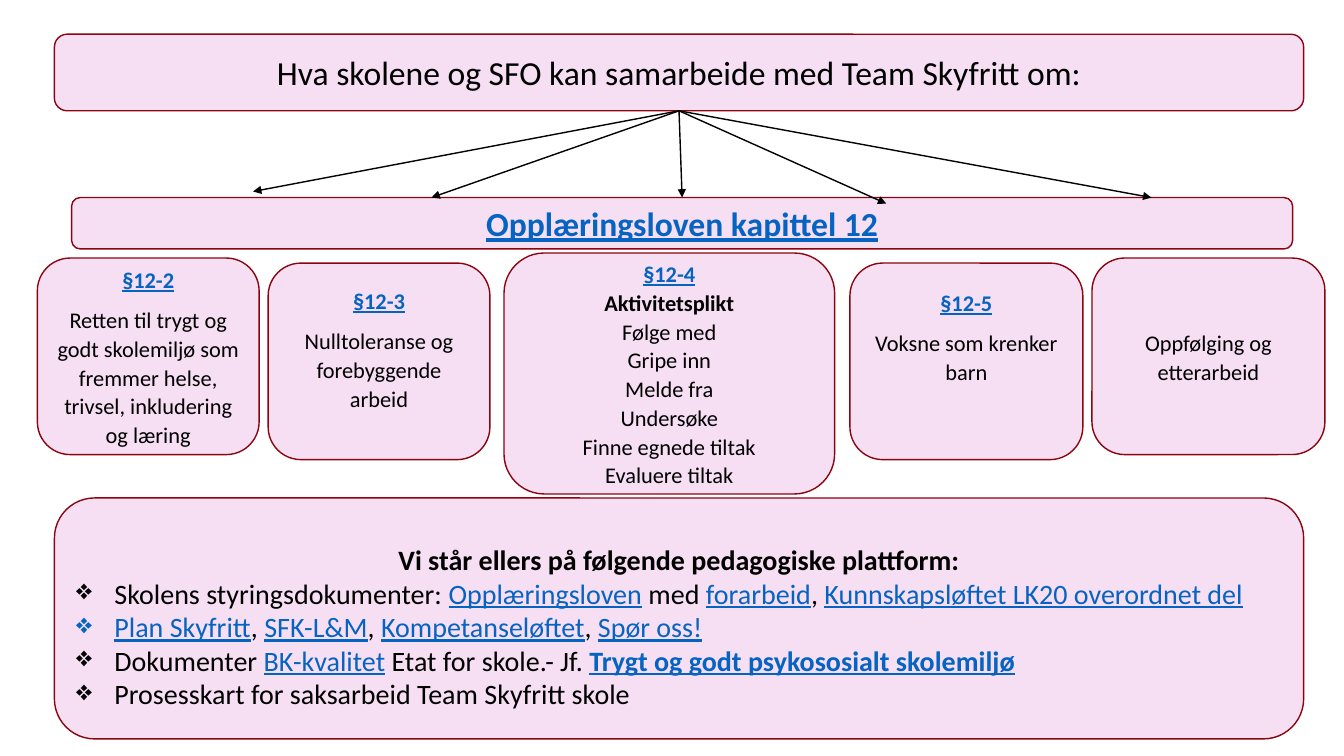
from dataclasses import dataclass

from pptx import Presentation
from pptx.dml.color import RGBColor
from pptx.enum.shapes import MSO_CONNECTOR, MSO_SHAPE
from pptx.enum.text import MSO_ANCHOR as Anchor, PP_ALIGN as Align
from pptx.oxml.ns import qn
from pptx.util import Emu, Inches, Pt
from lxml.etree import SubElement

PINK, DARK_RED, BLACK, LINK_BLUE = "F6DEF3", "8B0410", "000000", "0563C1"
PLAIN = {"name": "Calibri", "color": BLACK, "bold": False, "underline": False}
BOLD = PLAIN | {"bold": True}
LINK = PLAIN | {"color": LINK_BLUE, "underline": True}
BOLD_LINK = LINK | {"bold": True}
BOTTOM, TOP = 2, 0  # connection sites


@dataclass(frozen=True)
class Area:
    """Position and size in percent of the slide's width and height."""
    left: float
    top: float
    width: float
    height: float


@dataclass(frozen=True)
class Line:
    """One paragraph: pairs of text and format, and its layout."""
    runs: tuple
    space_after: float = 0
    bullet: bool = False


@dataclass(frozen=True)
class Card:
    area: Area
    lines: tuple = ()
    size: float = 16
    spacing: float = 1.07
    inset_top: float = 0.05
    inset_bottom: float = 0.05


def section(name: str, text: str) -> tuple:
    return Line(((name, BOLD_LINK),), 8), Line(((text, PLAIN),))


HEADING = "Hva skolene og SFO kan samarbeide med Team Skyfritt om:"
HEADER = Card(Area(4.05, 4.53, 92.95, 10.13))
LAW = Card(Area(5.33, 26.13, 90.85, 6.8),
           (Line((("Opplæringsloven kapittel 12", BOLD_LINK),)),), 24, 1)

DUTIES = ("Følge med", "Gripe inn", "Melde fra", "Undersøke",
          "Finne egnede tiltak", "Evaluere tiltak")
SECTIONS = (
    Card(Area(2.78, 34.13, 16.5, 26),
         section("§12-2", "Retten til trygt og godt skolemiljø som fremmer helse, "
                          "trivsel, inkludering og læring")),
    Card(Area(19.95, 34.8, 16.5, 26),
         section("§12-3", "Nulltoleranse og forebyggende arbeid"), inset_bottom=0.3),
    Card(Area(37.5, 33.47, 24.6, 31.87),
         (Line((("§12-4", BOLD_LINK),)), Line((("Aktivitetsplikt", BOLD),)),
          *(Line(((duty, PLAIN),)) for duty in DUTIES))),
    Card(Area(63.24, 34.8, 17.33, 26),
         section("§12-5", "Voksne som krenker barn"), inset_bottom=0.55),
    Card(Area(81.25, 34.13, 17.33, 26),
         (Line((("Oppfølging og etterarbeid", PLAIN),)),)),
)

COMMA = (", ", PLAIN)
PLATFORM = Card(Area(4.05, 65.87, 92.95, 31.87), (
    Line((("Vi står ellers på følgende pedagogiske plattform:", BOLD),)),
    Line((("Skolens styringsdokumenter: ", PLAIN), ("Opplæringsloven", LINK),
          (" med ", PLAIN), ("forarbeid", LINK), COMMA,
          ("Kunnskapsløftet LK20 overordnet del", LINK)), bullet=True),
    Line((("Plan Skyfritt", LINK), COMMA, ("SFK-L&M", LINK), COMMA,
          ("Kompetanseløftet", LINK), COMMA, ("Spør oss!", LINK)), bullet=True),
    Line((("Dokumenter ", PLAIN), ("BK-kvalitet", LINK),
          (" Etat for skole.- Jf. ", PLAIN),
          ("Trygt og godt psykososialt skolemiljø", BOLD_LINK)), bullet=True),
    Line((("Prosesskart for saksarbeid Team Skyfritt skole", PLAIN),), bullet=True),
), 20, 1, inset_top=0.21)

# Arrow tips; the middle arrow is joined to the law bar instead
ARROW_TIPS = ((18.83, 25.33), (32.11, 26.13), (65.94, 26.93), (85.67, 26.13))

presentation = Presentation()
presentation.slide_width, presentation.slide_height = Inches(13.33), Inches(7.5)
slide = presentation.slides.add_slide(presentation.slide_layouts[5])


def across(share: float) -> Emu:
    return Emu(round(presentation.slide_width * share / 100))


def down(share: float) -> Emu:
    return Emu(round(presentation.slide_height * share / 100))


def box(area: Area) -> tuple:
    return across(area.left), down(area.top), across(area.width), down(area.height)


def color(value: str) -> RGBColor:
    return RGBColor.from_string(value)


def format_font(font, values: dict) -> None:
    for name, value in values.items():
        if name == "color":
            font.color.rgb = color(value)
        else:
            setattr(font, name, value)


def write_line(paragraph, line: Line, card: Card) -> None:
    paragraph.alignment = Align.LEFT if line.bullet else Align.CENTER
    paragraph.line_spacing = card.spacing
    paragraph.space_after = Pt(line.space_after)
    if line.bullet:
        properties = paragraph._p.get_or_add_pPr()
        properties.set("marL", str(Inches(0.38)))
        properties.set("indent", str(-Inches(0.38)))
        SubElement(properties, qn("a:buChar")).set("char", "❖")
    for text, values in line.runs:
        run = paragraph.add_run()
        run.text = text
        format_font(run.font, values | {"size": Pt(card.size)})


def draw_card(card: Card):
    shape = slide.shapes.add_shape(MSO_SHAPE.FLOWCHART_ALTERNATE_PROCESS, *box(card.area))
    shape.shadow.inherit = False
    shape.fill.solid()
    shape.fill.fore_color.rgb = color(PINK)
    shape.line.color.rgb = color(DARK_RED)
    shape.line.width = Pt(1)
    frame = shape.text_frame
    frame.word_wrap = True
    frame.vertical_anchor = Anchor.MIDDLE
    frame.margin_top = Inches(card.inset_top)
    frame.margin_bottom = Inches(card.inset_bottom)
    for index, line in enumerate(card.lines):
        paragraph = frame.add_paragraph() if index else frame.paragraphs[0]
        write_line(paragraph, line, card)
    return shape


def draw_arrow(start, tip: tuple):
    arrow = slide.shapes.add_connector(MSO_CONNECTOR.STRAIGHT, 0, 0,
                                       across(tip[0]), down(tip[1]))
    arrow.begin_connect(start, BOTTOM)
    arrow.line.color.rgb = color(BLACK)
    arrow.line.width = Pt(1)
    SubElement(arrow.line._get_or_add_ln(), qn("a:tailEnd")).set("type", "triangle")
    SubElement(arrow._element.spPr, qn("a:effectLst"))
    return arrow


# Cards
draw_card(PLATFORM)
header_bar = draw_card(HEADER)
law_bar = draw_card(LAW)
for section_card in SECTIONS:
    draw_card(section_card)

# Title, in front of its bar
title = slide.shapes.title
title.left, title.top, title.width, title.height = box(HEADER.area)
title.text_frame.text = HEADING
title.text_frame.word_wrap = True
title.text_frame.vertical_anchor = Anchor.MIDDLE
title.text_frame.paragraphs[0].alignment = Align.CENTER
format_font(title.text_frame.paragraphs[0].runs[0].font, PLAIN | {"size": Pt(24)})
header_bar._element.addnext(title._element)

# Arrows from the header to the law bar
for arrow_tip in ARROW_TIPS:
    draw_arrow(header_bar, arrow_tip)
draw_arrow(header_bar, (50.79, 26.13)).end_connect(law_bar, TOP)

presentation.save("out.pptx")
